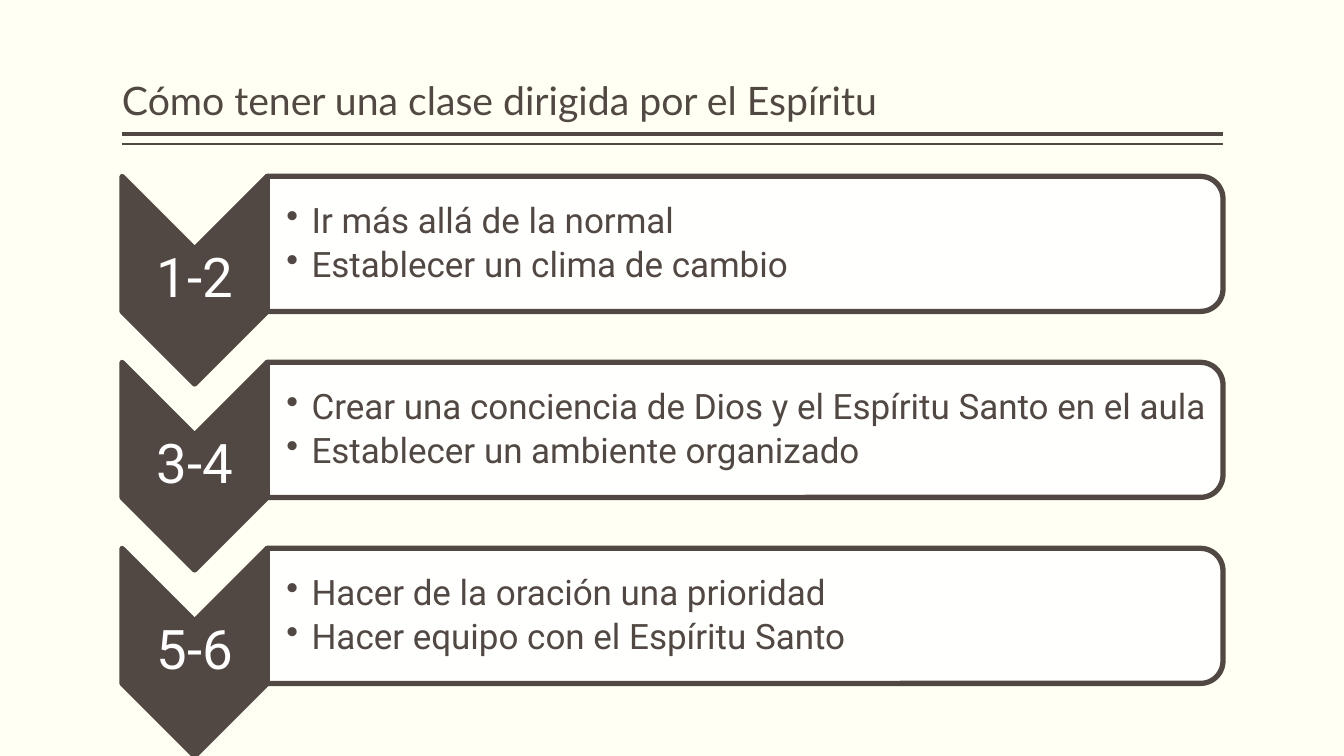
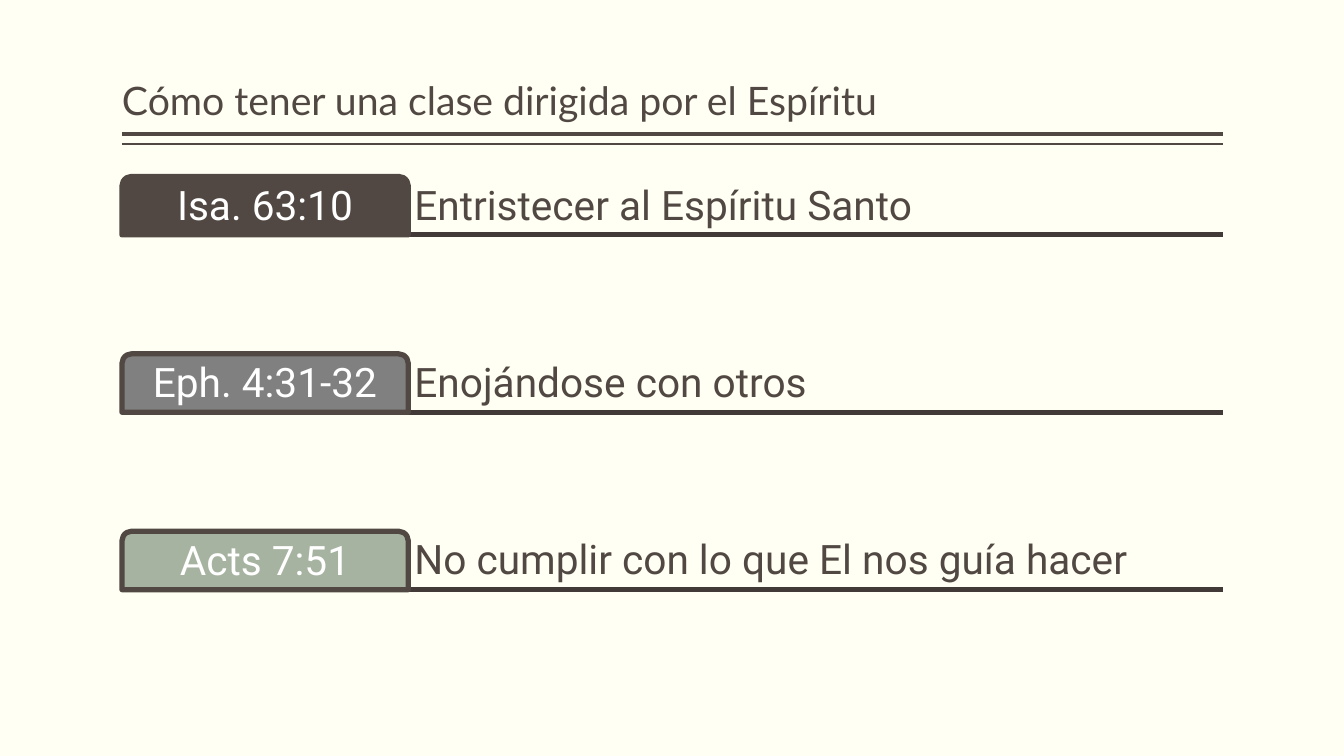
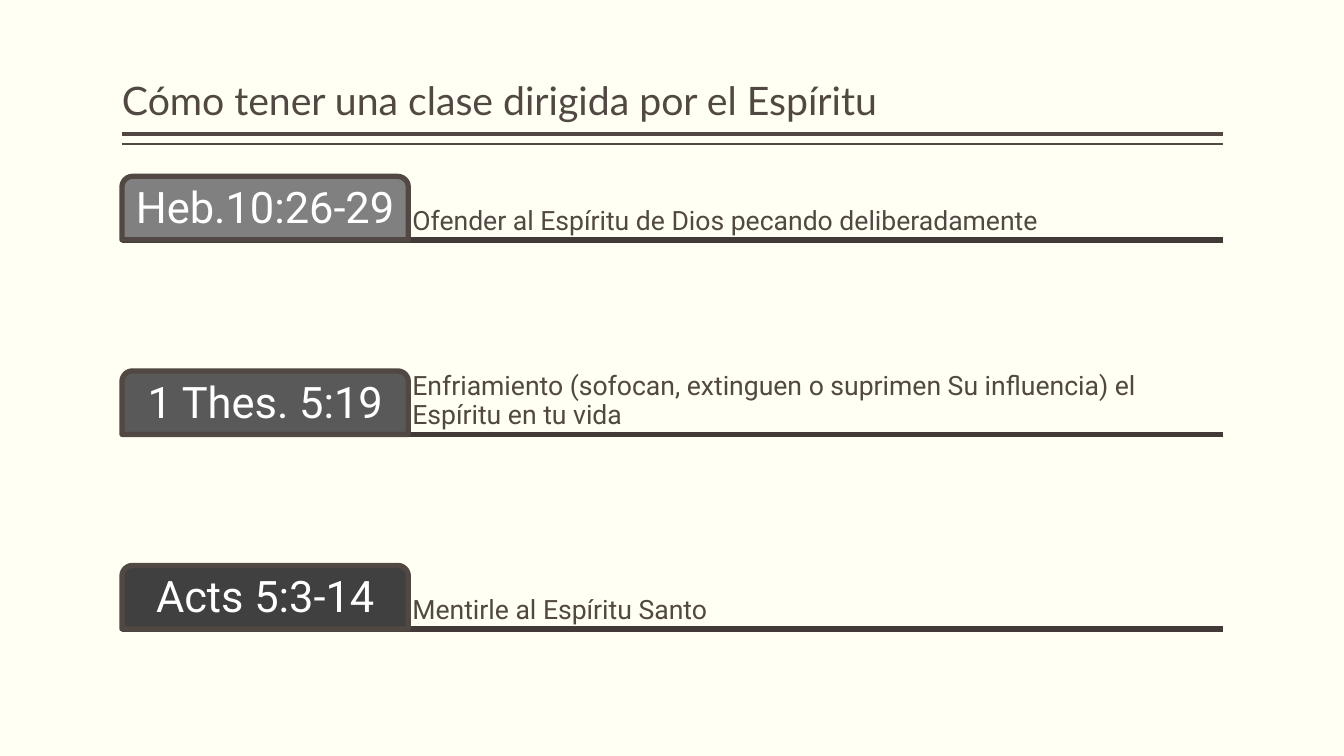
"""Build three slides on leading a class guided by the Spirit."""
from dataclasses import dataclass

from lxml.etree import SubElement
from pptx import Presentation
from pptx.dml.color import RGBColor
from pptx.enum.shapes import MSO_CONNECTOR as Connector, MSO_SHAPE as Preset
from pptx.enum.text import MSO_ANCHOR as Anchor, MSO_AUTO_SIZE as AutoSize, PP_ALIGN as Align
from pptx.oxml.ns import qn
from pptx.presentation import Presentation as Deck
from pptx.shapes.autoshape import Shape
from pptx.slide import Slide
from pptx.text.text import TextFrame
from pptx.util import Inches, Length, Pt

CREAM = RGBColor(0xFF, 0xFF, 0xF3)
BROWN = RGBColor(0x51, 0x48, 0x43)
DARK_BROWN = RGBColor(0x41, 0x3A, 0x36)
WHITE = RGBColor(0xFF, 0xFF, 0xFF)
GRAY = RGBColor(0x80, 0x80, 0x80)
DIM_GRAY = RGBColor(0x59, 0x59, 0x59)
CHARCOAL = RGBColor(0x40, 0x40, 0x40)
SAGE = RGBColor(0xA7, 0xB3, 0xA1)

TITLE = "Cómo tener una clase dirigida por el Espíritu"
TITLE_FONT = "Lato"
BODY_FONT = "Roboto"
OUTLINE = Pt(3.78)

LEFT = Inches(1.21)
RIGHT = Inches(12.13)
TOP = Inches(1.75)

CHEVRON_WIDTH = Inches(1.44)
CHEVRON_HEIGHT = Inches(2.06)
PANEL_HEIGHT = Inches(1.34)
STEP_PITCH = Inches(3.69) // 2
TAB_WIDTH = Inches(2.84)


@dataclass(frozen=True)
class TextStyle:
    """Look of the text in one frame."""

    size: float
    color: RGBColor = BROWN
    font: str = BODY_FONT
    align: Align = Align.LEFT
    anchor: Anchor = Anchor.MIDDLE
    margins: tuple[float, float, float, float] = (0.06, 0.06, 0.06, 0.06)


@dataclass(frozen=True)
class Step:
    """A numbered chevron with its bulleted advice."""

    number: str
    advice: tuple[str, ...]


@dataclass(frozen=True)
class Verse:
    """A Bible reference on a tab and what it warns about."""

    reference: str
    warning: str
    fill: RGBColor


@dataclass(frozen=True)
class VerseLayout:
    """Sizes shared by all verses of one slide."""

    height: Length
    pitch: Length
    reference: TextStyle
    warning: TextStyle


TITLE_STYLE = TextStyle(28, font=TITLE_FONT, anchor=Anchor.BOTTOM, margins=(0, 0.05, 0, 0.05))
NUMBER_STYLE = TextStyle(39, WHITE, align=Align.CENTER, margins=(0.03, 0.03, 0.03, 0.03))
ADVICE_STYLE = TextStyle(25, margins=(0.19, 0.02, 0.02, 0.02))

STEPS = (
    Step("1-2", ("Ir más allá de la normal", "Establecer un clima de cambio")),
    Step("3-4", ("Crear una conciencia de Dios y el Espíritu Santo en el aula",
                 "Establecer un ambiente organizado")),
    Step("5-6", ("Hacer de la oración una prioridad", "Hacer equipo con el Espíritu Santo")),
)

LARGE_VERSES = VerseLayout(
    Inches(0.58), Inches(1.76),
    TextStyle(29, WHITE, align=Align.CENTER),
    TextStyle(29, anchor=Anchor.BOTTOM),
)
SMALL_VERSES = VerseLayout(
    Inches(0.63), Inches(1.93),
    TextStyle(31, WHITE, align=Align.CENTER),
    TextStyle(19, anchor=Anchor.BOTTOM, margins=(0.04, 0.04, 0.04, 0.04)),
)

VERSE_PAGES = (
    (LARGE_VERSES, (
        Verse("Isa. 63:10", "Entristecer al Espíritu Santo", BROWN),
        Verse("Eph. 4:31-32", "Enojándose con otros", GRAY),
        Verse("Acts 7:51", "No cumplir con lo que El nos guía hacer", SAGE),
    )),
    (SMALL_VERSES, (
        Verse("Heb.10:26-29", "Ofender al Espíritu de Dios pecando deliberadamente", GRAY),
        Verse("1 Thes. 5:19",
              "Enfriamiento (sofocan, extinguen o suprimen Su influencia) el Espíritu en tu vida",
              DIM_GRAY),
        Verse("Acts 5:3-14", "Mentirle al Espíritu Santo", CHARCOAL),
    )),
)


def write(frame: TextFrame, text: str, style: TextStyle) -> None:
    """Fill a frame with text, one paragraph a line, in the given style."""
    frame.text = text
    frame.word_wrap = True
    frame.auto_size = AutoSize.NONE
    frame.vertical_anchor = style.anchor
    (frame.margin_left, frame.margin_top,
     frame.margin_right, frame.margin_bottom) = map(Inches, style.margins)
    for para in frame.paragraphs:
        para.alignment = style.align
        para.line_spacing = 0.9
        for span in para.runs:
            span.font.size = Pt(style.size)
            span.font.name = style.font
            span.font.color.rgb = style.color


def add_bullets(frame: TextFrame) -> None:
    """Give each paragraph a hanging bullet and a small gap below."""
    for para in frame.paragraphs:
        para.level = 1
        para.space_after = Pt(4.4)
        properties = para._p.get_or_add_pPr()
        properties.set("marL", str(Inches(0.25)))
        properties.set("indent", str(-Inches(0.25)))
        SubElement(properties, qn("a:buChar")).set("char", "•")


def add_label(page: Slide, left: Length, top: Length, width: Length, height: Length,
              text: str, style: TextStyle) -> TextFrame:
    """Add a text box and return its frame."""
    box = page.shapes.add_textbox(left, top, width, height)
    write(box.text_frame, text, style)
    return box.text_frame


def add_outlined(page: Slide, preset: Preset, left: Length, top: Length,
                 width: Length, height: Length, fill: RGBColor) -> Shape:
    """Add a filled preset shape with the brown outline."""
    shape = page.shapes.add_shape(preset, left, top, width, height)
    shape.shadow.inherit = False
    shape.fill.solid()
    shape.fill.fore_color.rgb = fill
    shape.line.color.rgb = BROWN
    shape.line.width = OUTLINE
    return shape


def add_turned(page: Slide, preset: Preset, left: Length, top: Length,
               width: Length, height: Length, fill: RGBColor) -> Shape:
    """Add a shape turned a quarter so that it covers the given area."""
    shift = (width - height) // 2
    shape = add_outlined(page, preset, left + shift, top - shift, height, width, fill)
    shape.rotation = 90
    return shape


def add_rule(page: Slide, y: Length, width: Length, color: RGBColor) -> None:
    """Draw a horizontal rule across the content width."""
    rule = page.shapes.add_connector(Connector.STRAIGHT, LEFT, y, RIGHT, y)
    rule.line.color.rgb = color
    rule.line.width = width
    SubElement(rule.element.spPr, qn("a:effectLst"))


def add_page(deck: Deck) -> Slide:
    """Add a slide with the shared title and double rule."""
    page = deck.slides.add_slide(deck.slide_layouts[5])
    title = page.shapes.title
    title.left, title.top = LEFT, Inches(0.08)
    title.width, title.height = RIGHT - LEFT, Inches(1.2)
    write(title.text_frame, TITLE, TITLE_STYLE)
    add_rule(page, Inches(1.33), Pt(3), BROWN)
    add_rule(page, Inches(1.43), Pt(1), BROWN)
    return page


def add_step(page: Slide, top: Length, step: Step) -> None:
    """Draw a chevron with its number and the panel beside it."""
    panel_left = LEFT + CHEVRON_WIDTH
    add_turned(page, Preset.CHEVRON, LEFT, top, CHEVRON_WIDTH, CHEVRON_HEIGHT, BROWN)
    add_label(page, LEFT, top + CHEVRON_WIDTH // 2, CHEVRON_WIDTH,
              CHEVRON_HEIGHT - CHEVRON_WIDTH, step.number, NUMBER_STYLE)
    panel = add_turned(page, Preset.ROUND_2_SAME_RECTANGLE, panel_left, top,
                       RIGHT - panel_left, PANEL_HEIGHT, WHITE)
    color = panel.element.spPr.find(qn("a:solidFill"))[0]
    SubElement(color, qn("a:alpha")).set("val", "90000")
    advice = add_label(page, panel_left, top + Inches(0.07), Inches(9.41), Inches(1.21),
                       "\n".join(step.advice), ADVICE_STYLE)
    add_bullets(advice)


def add_verse(page: Slide, top: Length, verse: Verse, layout: VerseLayout) -> None:
    """Draw a reference tab, its warning and the rule below both."""
    warning_left = LEFT + TAB_WIDTH
    add_rule(page, top + layout.height, OUTLINE, DARK_BROWN)
    add_label(page, warning_left, top, RIGHT - warning_left, layout.height,
              verse.warning, layout.warning)
    tab = add_outlined(page, Preset.ROUND_2_SAME_RECTANGLE, LEFT, top,
                       TAB_WIDTH, layout.height, verse.fill)
    write(tab.text_frame, verse.reference, layout.reference)


def main() -> None:
    """Build and save the deck."""
    deck = Presentation()
    deck.slide_width, deck.slide_height = Inches(13.33), Inches(7.5)
    background = deck.slide_master.background.fill
    background.solid()
    background.fore_color.rgb = CREAM

    page = add_page(deck)
    for index, step in enumerate(STEPS):
        add_step(page, TOP + index * STEP_PITCH, step)

    for layout, verses in VERSE_PAGES:
        page = add_page(deck)
        for index, verse in enumerate(verses):
            add_verse(page, TOP + index * layout.pitch, verse, layout)

    deck.save("out.pptx")


if __name__ == "__main__":
    main()
